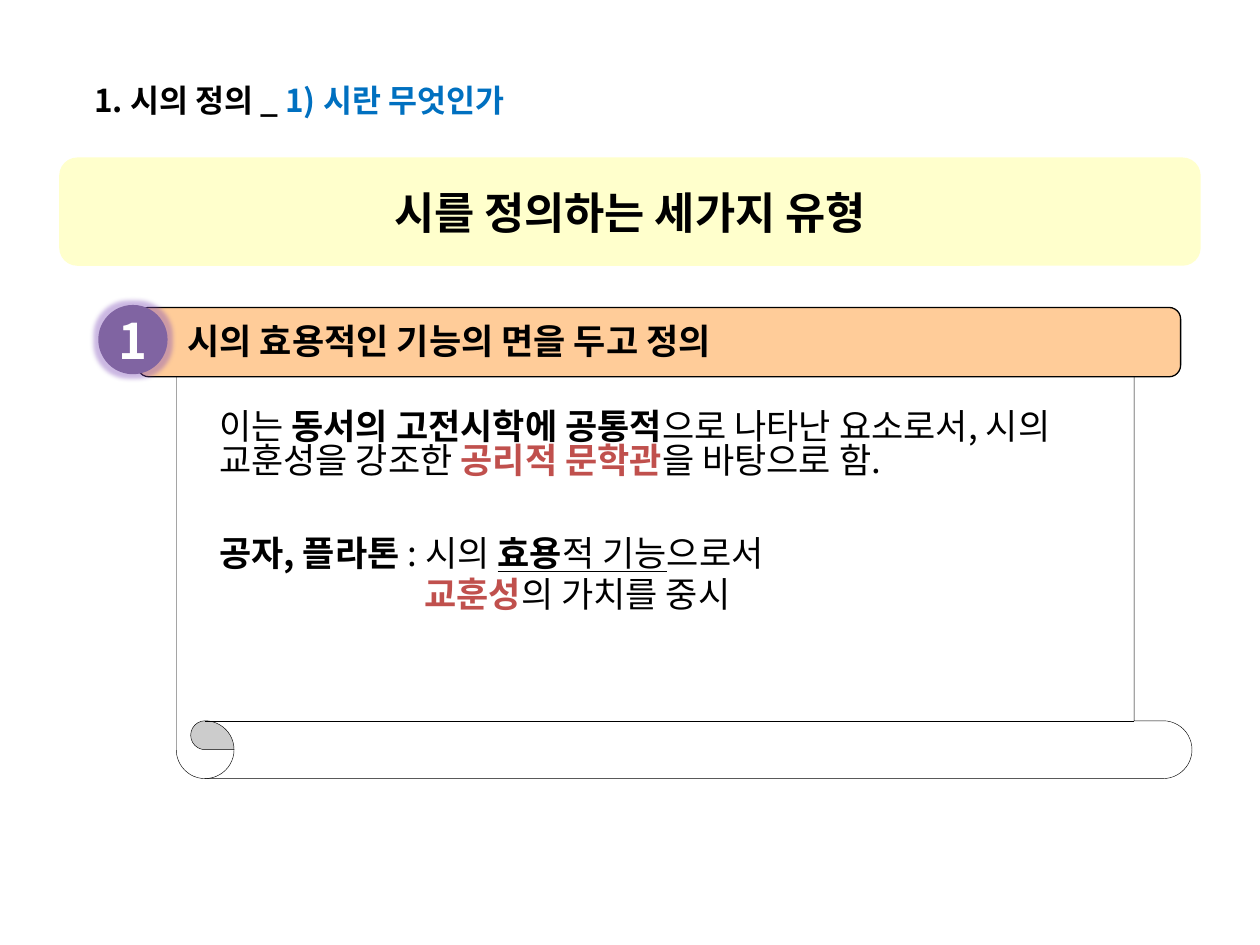
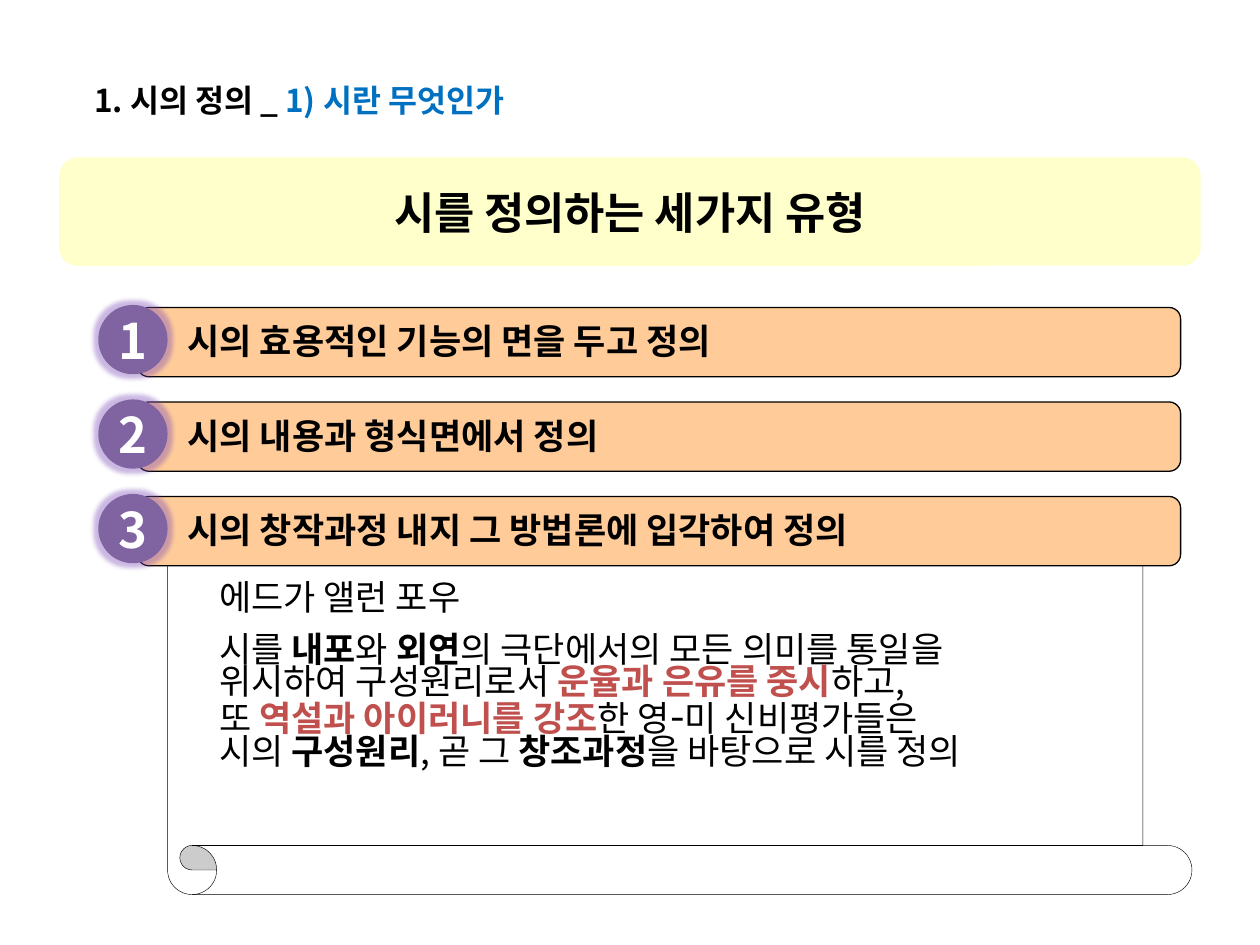
from pptx import Presentation
from pptx.dml.color import RGBColor
from pptx.enum.shapes import MSO_SHAPE
from pptx.enum.text import MSO_ANCHOR, PP_ALIGN
from pptx.oxml import parse_xml
from pptx.oxml.ns import nsdecls, qn
from pptx.oxml.xmlchemy import OxmlElement
from pptx.util import Inches, Pt

FONT = "Noto Sans CJK KR"
BLACK = RGBColor(0x00, 0x00, 0x00)
WHITE = RGBColor(0xFF, 0xFF, 0xFF)
BLUE = RGBColor(0x00, 0x70, 0xC0)
RED = RGBColor(0xC0, 0x50, 0x4D)
PURPLE = RGBColor(0x80, 0x64, 0xA2)
ORANGE = RGBColor(0xFF, 0xCC, 0x99)
YELLOW = RGBColor(0xFF, 0xFF, 0xCC)

# A span is its text, then any of size, color, bold and underline.
PLAIN = {}
BOLD = {"bold": True}
KEY = {"bold": True, "color": RED}
UNDERLINED = {"underline": True}

CHAPTER = [("1. 시의 정의 _ ", BOLD), ("1) 시란 무엇인가", {"bold": True, "color": BLUE})]
BANNER = "시를 정의하는 세가지 유형"
DEFINITIONS = [
    "시의 효용적인 기능의 면을 두고 정의",
    "시의 내용과 형식면에서 정의",
    "시의 창작과정 내지 그 방법론에 입각하여 정의",
]

# Each body paragraph: space before in points, left indent in inches, spans.
SLIDES = [
    {
        "definitions": 1,
        "scroll": (2.51, 3.67),
        "body": (3.22, 2.34),
        "line_spacing": 0.82,
        "paragraphs": [
            (2, 0, [("이는 ", PLAIN), ("동서의 고전시학에 공통적", BOLD),
                    ("으로 나타난 요소로서, 시의 교훈성을 강조한 ", PLAIN),
                    ("공리적 문학관", KEY), ("을 바탕으로 함.", PLAIN)]),
            (33, 0, [("공자, 플라톤 ", BOLD), (": 시의 ", PLAIN),
                     ("효용", BOLD | UNDERLINED), ("적 기능", UNDERLINED),
                     ("으로서", PLAIN)]),
            (4, 1.63, [("교훈성", KEY), ("의 가치를 중시", PLAIN)]),
        ],
    },
    {
        "definitions": 3,
        "scroll": (3.98, 3.12),
        "body": (4.61, 1.88),
        "line_spacing": 0.7,
        "paragraphs": [
            (0, 0, [("에드가 앨런 포우", PLAIN)]),
            (13, 0, [("시를 ", PLAIN), ("내포", BOLD), ("와 ", PLAIN), ("외연", BOLD),
                     ("의 극단에서의 모든 의미를 통일을", PLAIN)]),
            (1.4, 0, [("위시하여 구성원리로서 ", PLAIN), ("운율과 은유를 중시", KEY),
                      ("하고,", PLAIN)]),
            (1.4, 0, [("또 ", PLAIN), ("역설과 아이러니를 강조", KEY), ("한 영", PLAIN),
                      ("-", {"size": 24}), ("미 신비평가들은", PLAIN)]),
            (1.4, 0, [("시의 ", PLAIN), ("구성원리", BOLD), (", 곧 그 ", PLAIN),
                      ("창조과정", BOLD), ("을 바탕으로 시를 정의", PLAIN)]),
        ],
    },
]

FIRST_BAR_TOP = 2.44
BAR_STEP = 0.75
BAR_HEIGHT = 0.55


def add_span(para, text, size=20, color=BLACK, bold=False, underline=False):
    span = para.add_run()
    span.text = text
    font = span.font
    font.size = Pt(size)
    font.bold = bold
    if underline:
        font.underline = True
    font.color.rgb = color
    font.name = FONT
    east_asian = OxmlElement("a:ea")
    east_asian.set("typeface", FONT)
    font._element.append(east_asian)


def add_box(page, left, top, width, height, wrap=False):
    box = page.shapes.add_textbox(Inches(left), Inches(top), Inches(width), Inches(height))
    box.text_frame.word_wrap = wrap
    return box


def add_filled(page, kind, place, fill, line_width=None):
    shape = page.shapes.add_shape(kind, *map(Inches, place))
    shape.shadow.inherit = False
    shape.fill.solid()
    shape.fill.fore_color.rgb = fill
    if line_width:
        shape.line.color.rgb = BLACK
        shape.line.width = Pt(line_width)
    else:
        shape.line.fill.background()
    return shape


def center_text(shape, text, size, color):
    frame = shape.text_frame
    frame.vertical_anchor = MSO_ANCHOR.MIDDLE
    frame.paragraphs[0].alignment = PP_ALIGN.CENTER
    add_span(frame.paragraphs[0], text, size, color, bold=True)


def add_glow(shape):
    effects = shape._element.spPr.find(qn("a:effectLst"))
    effects.append(parse_xml(
        f'<a:glow {nsdecls("a")} rad="63500"><a:srgbClr val="{PURPLE}">'
        '<a:satMod val="175000"/><a:alpha val="40000"/></a:srgbClr></a:glow>'))


def add_scroll(page, top, height):
    """Draw the paper that unrolls downwards from the last bar."""
    scroll = add_filled(page, MSO_SHAPE.VERTICAL_SCROLL, (0.94, top, 8.52, height), WHITE, 0.25)
    scroll._element.spPr.find(qn("a:xfrm")).set("flipV", "1")


def add_definition(page, index):
    top = FIRST_BAR_TOP + index * BAR_STEP
    add_filled(page, MSO_SHAPE.ROUNDED_RECTANGLE, (1.09, top, 8.28, BAR_HEIGHT), ORANGE, 0.75)
    badge = add_filled(page, MSO_SHAPE.OVAL, (0.78, top - 0.02, 0.55, 0.55), PURPLE)
    badge.text_frame.word_wrap = False
    center_text(badge, str(index + 1), 28, WHITE)
    add_glow(badge)
    label = add_box(page, 1.39, top + 0.05, 7.36, 0.44)
    add_span(label.text_frame.paragraphs[0], DEFINITIONS[index], bold=True)


def add_body(page, top, height, line_spacing, paragraphs):
    frame = add_box(page, 1.64, top, 7.03, height, wrap=True).text_frame
    for number, (space_before, indent, spans) in enumerate(paragraphs):
        para = frame.add_paragraph() if number else frame.paragraphs[0]
        para.line_spacing = line_spacing
        para.space_before = Pt(space_before)
        if indent:
            para._p.get_or_add_pPr().set("marL", str(Inches(indent)))
        for text, style in spans:
            add_span(para, text, **style)


def add_heading(page):
    chapter = add_box(page, 0.65, 0.59, 4.14, 0.4)
    for text, style in CHAPTER:
        add_span(chapter.text_frame.paragraphs[0], text, size=18, **style)
    banner = add_filled(page, MSO_SHAPE.ROUNDED_RECTANGLE, (0.47, 1.25, 9.06, 0.86), YELLOW)
    center_text(banner, BANNER, 25, BLACK)


def main():
    deck = Presentation()
    deck.slide_width, deck.slide_height = Inches(10), Inches(7.5)
    for content in SLIDES:
        page = deck.slides.add_slide(deck.slide_layouts[6])
        add_scroll(page, *content["scroll"])
        add_heading(page)
        for index in range(content["definitions"]):
            add_definition(page, index)
        add_body(page, *content["body"], content["line_spacing"], content["paragraphs"])
    deck.save("out.pptx")


if __name__ == "__main__":
    main()
